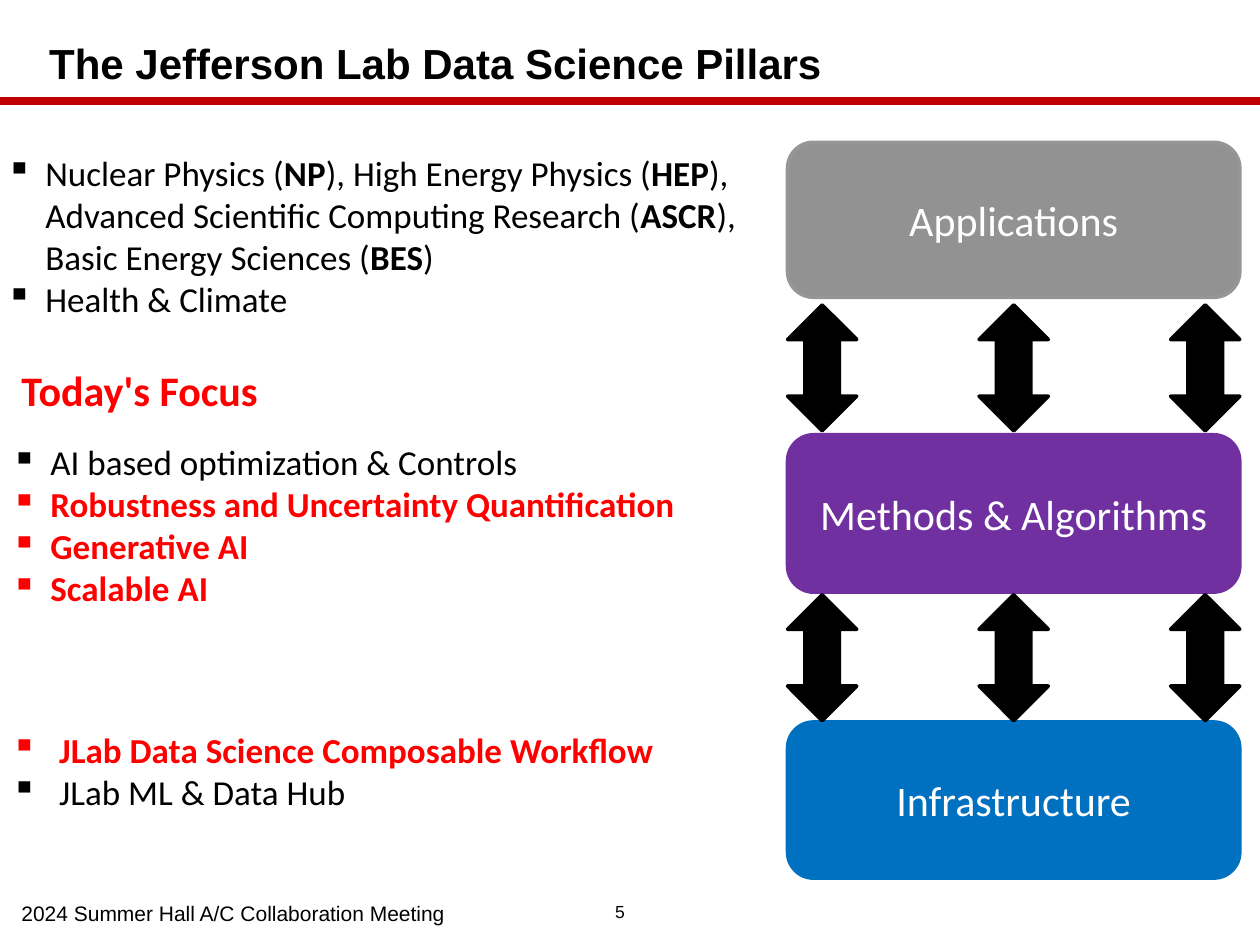
from dataclasses import dataclass
from typing import Optional

from lxml.etree import SubElement
from pptx import Presentation
from pptx.dml.color import RGBColor
from pptx.enum.shapes import MSO_CONNECTOR, MSO_SHAPE
from pptx.enum.text import MSO_ANCHOR, MSO_AUTO_SIZE, PP_ALIGN
from pptx.oxml.ns import qn
from pptx.util import Inches, Pt

BLACK = RGBColor(0x00, 0x00, 0x00)
WHITE = RGBColor(0xFF, 0xFF, 0xFF)
RED = RGBColor(0xFF, 0x00, 0x00)
RULE = RGBColor(0xC0, 0x00, 0x00)
GRAY = RGBColor(0x92, 0x92, 0x92)
EDGE = RGBColor(0x96, 0x96, 0x96)
PURPLE = RGBColor(0x70, 0x30, 0xA0)
BLUE = RGBColor(0x00, 0x70, 0xC0)


@dataclass
class Run:
    text: str
    color: RGBColor = BLACK
    bold: bool = False
    size: int = 20
    font: str = "Calibri"


@dataclass
class Box:
    left: float
    top: float
    width: float
    height: float
    lines: list[list[Run]]
    indent: float = 0
    anchor: MSO_ANCHOR = MSO_ANCHOR.TOP
    align: Optional[PP_ALIGN] = None
    wrap: bool = True


@dataclass
class Pillar:
    name: str
    top: float
    height: float
    fill: RGBColor
    edge: RGBColor


PILLARS = [
    Pillar("Applications", 1.13, 1.23, GRAY, EDGE),
    Pillar("Methods & Algorithms", 3.45, 1.25, PURPLE, PURPLE),
    Pillar("Infrastructure", 5.73, 1.24, BLUE, BLUE),
]

BOXES = [
    Box(0, 1.15, 6.15, 1.45, [
        [
            Run("Nuclear Physics ("), Run("NP", bold=True),
            Run("), High Energy Physics ("), Run("HEP", bold=True),
            Run("), Advanced Scientific Computing Research ("),
            Run("ASCR", bold=True),
            Run("), Basic Energy Sciences ("), Run("BES", bold=True),
            Run(")"),
        ],
        [Run("Health & Climate")],
    ], indent=0.31),
    Box(0.04, 3.45, 5.75, 1.45, [
        [Run("AI based optimization & Controls")],
        [Run("Robustness and Uncertainty Quantification", RED, True)],
        [Run("Generative AI", RED, True)],
        [Run("Scalable AI", RED, True)],
    ], indent=0.31),
    Box(0.04, 5.73, 5.89, 0.77, [
        [Run("JLab Data Science Composable Workflow", RED, True)],
        [Run("JLab ML & Data Hub")],
    ], indent=0.38),
    Box(0.12, 2.84, 3, 0.5, [[Run("Today's Focus", RED, True, 24)]]),
    Box(0.12, 7.1, 4.18, 0.3,
        [[Run("2024 Summer Hall A/C Collaboration Meeting",
              size=12, font="Arial")]],
        anchor=MSO_ANCHOR.MIDDLE),
    Box(4.83, 7.1, 0.18, 0.27, [[Run("5", size=10, font="Arial")]],
        anchor=MSO_ANCHOR.MIDDLE, align=PP_ALIGN.CENTER, wrap=False),
]


def add_run(para, item: Run) -> None:
    run = para.add_run()
    run.text = item.text
    run.font.name = item.font
    run.font.size = Pt(item.size)
    run.font.bold = item.bold
    run.font.color.rgb = item.color


def set_frame(frame, anchor: MSO_ANCHOR, fit: MSO_AUTO_SIZE) -> None:
    frame.auto_size = fit
    frame.vertical_anchor = anchor
    frame.margin_left = frame.margin_right = Inches(0.05)
    frame.margin_top = frame.margin_bottom = Inches(0.05)


def add_bullet(para, indent: float) -> None:
    props = para._p.get_or_add_pPr()
    props.set("marL", str(Inches(indent)))
    props.set("indent", str(-Inches(indent)))
    SubElement(props, qn("a:buChar"), char="▪")


def draw_title(slide) -> None:
    title = slide.shapes.title
    title.left, title.top = Inches(0.34), Inches(0.26)
    title.width, title.height = Inches(9.26), Inches(0.53)
    set_frame(title.text_frame, MSO_ANCHOR.MIDDLE, MSO_AUTO_SIZE.NONE)
    para = title.text_frame.paragraphs[0]
    para.alignment = PP_ALIGN.LEFT
    para.line_spacing = 0.9
    add_run(para, Run("The Jefferson Lab Data Science Pillars",
                      bold=True, size=24, font="Arial"))


def draw_rule(slide) -> None:
    rule = slide.shapes.add_connector(
        MSO_CONNECTOR.STRAIGHT,
        Inches(0), Inches(0.8), Inches(10), Inches(0.8))
    rule.line.color.rgb = RULE
    rule.line.width = Pt(4.5)
    SubElement(rule._element.spPr, qn("a:effectLst"))


def draw_shape(slide, kind: MSO_SHAPE, left: float, top: float, width: float,
               height: float, fill: RGBColor, edge: RGBColor):
    shape = slide.shapes.add_shape(
        kind, Inches(left), Inches(top), Inches(width), Inches(height))
    shape.shadow.inherit = False
    shape.fill.solid()
    shape.fill.fore_color.rgb = fill
    shape.line.color.rgb = edge
    shape.line.width = Pt(2)
    return shape


def draw_pillar(slide, item: Pillar) -> None:
    shape = draw_shape(slide, MSO_SHAPE.ROUNDED_RECTANGLE, 6.25, item.top,
                       3.59, item.height, item.fill, item.edge)
    frame = shape.text_frame
    frame.vertical_anchor = MSO_ANCHOR.MIDDLE
    para = frame.paragraphs[0]
    para.alignment = PP_ALIGN.CENTER
    add_run(para, Run(item.name, WHITE, size=24))


def draw_box(slide, box: Box) -> None:
    shape = slide.shapes.add_textbox(
        Inches(box.left), Inches(box.top),
        Inches(box.width), Inches(box.height))
    frame = shape.text_frame
    frame.word_wrap = box.wrap
    set_frame(frame, box.anchor, MSO_AUTO_SIZE.SHAPE_TO_FIT_TEXT)
    for i, line in enumerate(box.lines):
        para = frame.add_paragraph() if i else frame.paragraphs[0]
        para.alignment = box.align
        if box.indent:
            add_bullet(para, box.indent)
        for item in line:
            add_run(para, item)


def main() -> None:
    deck = Presentation()
    deck.slide_width, deck.slide_height = Inches(10), Inches(7.5)
    slide = deck.slides.add_slide(deck.slide_layouts[5])
    draw_rule(slide)
    draw_title(slide)
    for item in PILLARS:
        draw_pillar(slide, item)
    for top in (2.42, 4.72):
        for col in range(3):
            draw_shape(slide, MSO_SHAPE.UP_DOWN_ARROW, 6.25 + 1.52 * col, top,
                       0.55, 1, BLACK, BLACK)
    for box in BOXES:
        draw_box(slide, box)
    deck.save("out.pptx")


if __name__ == "__main__":
    main()
